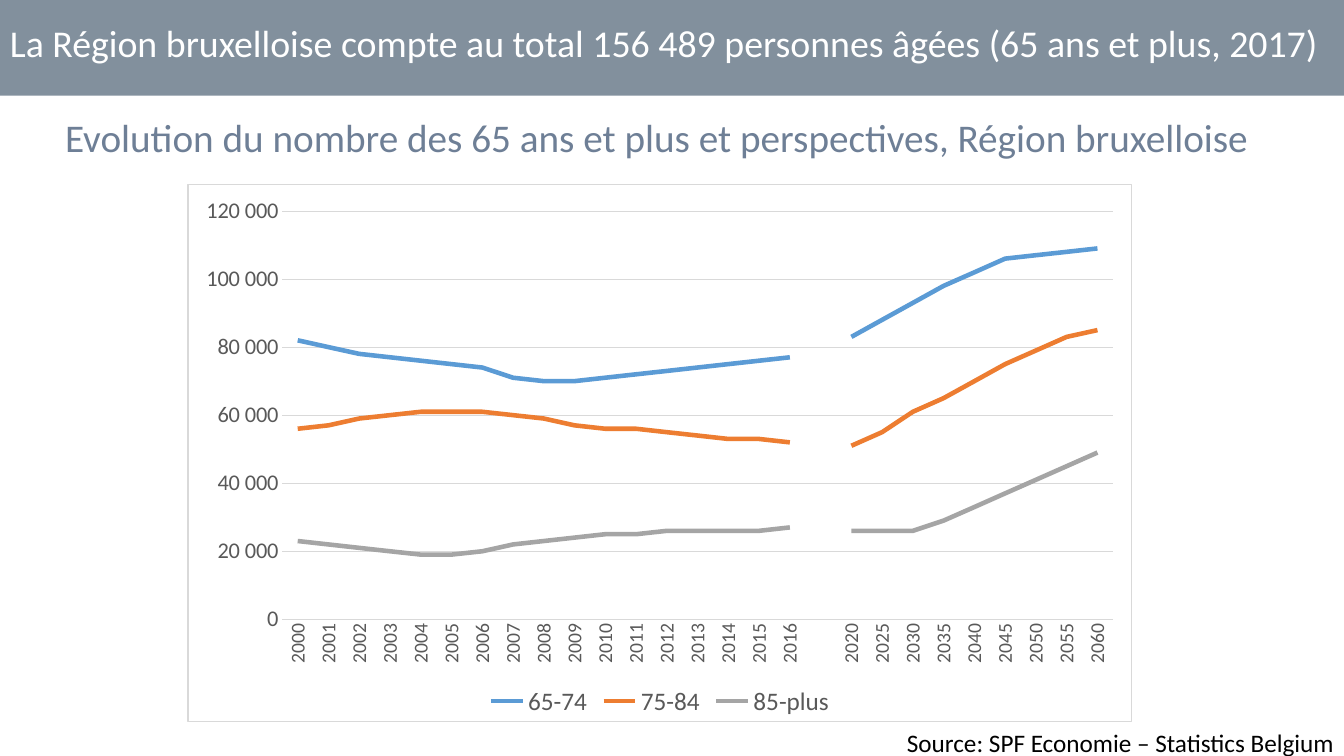
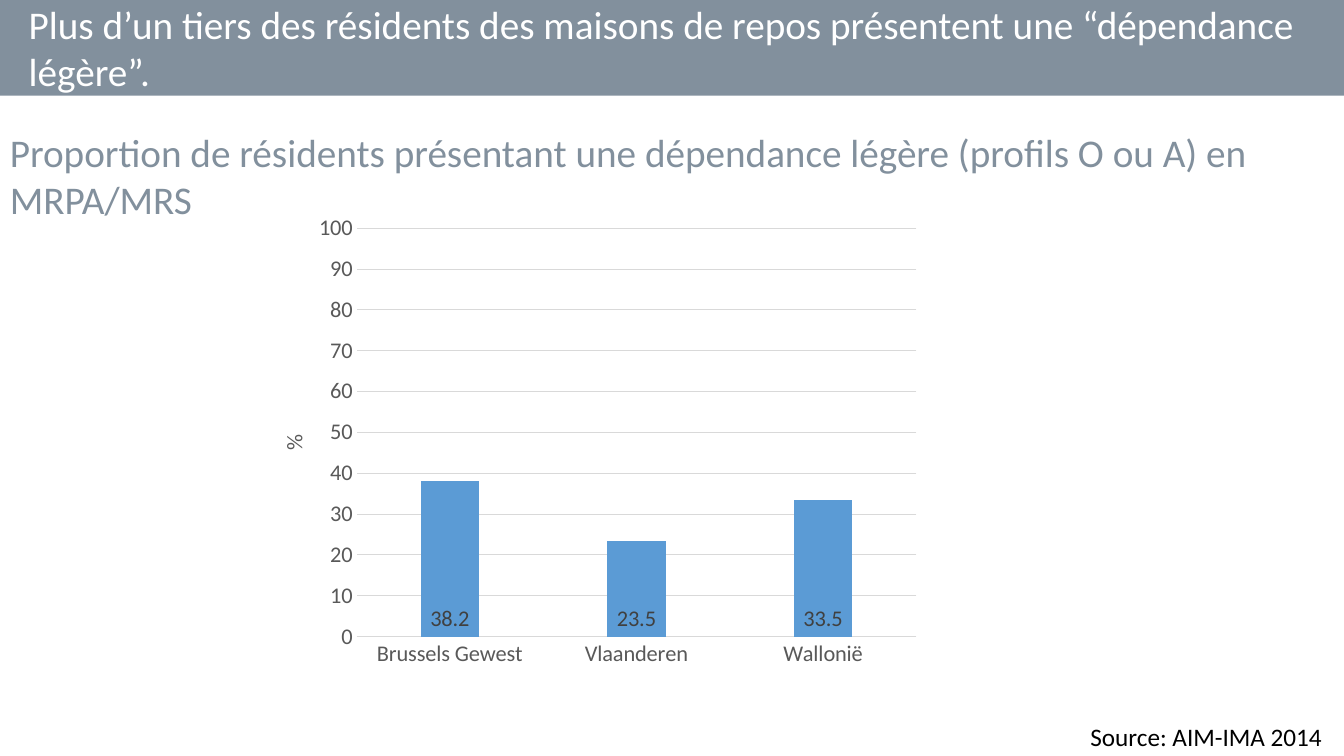
"""Two slides on older residents in Brussels: a line chart of trends and a column chart by region."""
from lxml import etree
from pptx import Presentation, util as u
from pptx.chart.data import CategoryChartData
from pptx.dml.color import RGBColor
from pptx.enum import chart as kinds, shapes, text
from pptx.oxml import parse_xml
from pptx.oxml.ns import nsdecls, qn

SLATE = RGBColor(0x82, 0x90, 0x9D)
STEEL = RGBColor(0x6E, 0x7F, 0x96)
WHITE = RGBColor(0xFF, 0xFF, 0xFF)
BLACK = RGBColor(0x00, 0x00, 0x00)
AXIS_GREY = RGBColor(0x59, 0x59, 0x59)
LABEL_GREY = RGBColor(0x40, 0x40, 0x40)
RULE_GREY = RGBColor(0xD9, 0xD9, 0xD9)
BLUE = RGBColor(0x5B, 0x9B, 0xD5)
ORANGE = RGBColor(0xED, 0x7D, 0x31)
SILVER = RGBColor(0xA5, 0xA5, 0xA5)
FONT = "Calibri"
VERTICAL = "-5400000"

deck = Presentation()
deck.slide_width, deck.slide_height = u.Inches(13.33), u.Inches(7.5)
COL, ROW = deck.slide_width / 100, deck.slide_height / 100


def style(font, size, color):
    font.name, font.size, font.bold = FONT, u.Pt(size), False
    font.color.rgb = color


def set_layout(parent, index, **shares):
    for old in parent.findall(qn("c:layout")):
        parent.remove(old)
    layout = etree.Element(qn("c:layout"))
    manual = etree.SubElement(layout, qn("c:manualLayout"))
    if "w" in shares:
        etree.SubElement(manual, qn("c:layoutTarget"), val="inner")
    for side in "xy":
        etree.SubElement(manual, qn(f"c:{side}Mode"), val="edge")
    for side, share in shares.items():
        etree.SubElement(manual, qn(f"c:{side}"), val=str(share))
    parent.insert(index, layout)


years = [*range(2000, 2017), "", *range(2020, 2061, 5)]
thousands = {
    "65-74": [82, 80, 78, 77, 76, 75, 74, 71, 70, 70, 71, 72, 73, 74, 75, 76, 77,
              None, 83, 88, 93, 98, 102, 106, 107, 108, 109],
    "75-84": [56, 57, 59, 60, 61, 61, 61, 60, 59, 57, 56, 56, 55, 54, 53, 53, 52,
              None, 51, 55, 61, 65, 70, 75, 79, 83, 85],
    "85-plus": [23, 22, 21, 20, 19, 19, 20, 22, 23, 24, 25, 25, 26, 26, 26, 26, 27,
                None, 26, 26, 26, 29, 33, 37, 41, 45, 49],
}
trends = CategoryChartData()
trends.categories = [str(year) for year in years]
for age_group, counts in thousands.items():
    trends.add_series(age_group, [n if n is None else n * 1000 for n in counts])

regions = CategoryChartData()
regions.categories = ["Brussels Gewest", "Vlaanderen", "Wallonië"]
regions.add_series("Series 1", [38.2, 23.5, 33.5])

LEFT, RIGHT = text.PP_ALIGN.LEFT, text.PP_ALIGN.RIGHT
pages = [
    {
        "texts": [
            ("La Région bruxelloise compte au total 156 489 personnes âgées (65 ans et plus, 2017)",
             (0, 2, 100, 7.5), 27, WHITE, LEFT),
            ("Source: SPF Economie – Statistics Belgium", (56.3, 95.5, 43.7, 5.3), 18, BLACK, RIGHT),
            ("Evolution du nombre des 65 ans et plus et perspectives, Région bruxelloise",
             (4.1, 14.3, 90.9, 7.6), 28, STEEL, LEFT),
        ],
        "kind": kinds.XL_CHART_TYPE.LINE, "data": trends, "area": (13.95, 24.3, 70.3, 71.2),
        "plot": {"x": 0.1, "y": 0.05, "w": 0.88, "h": 0.76},
        "top": 120000, "step": 20000, "category_size": 14,
    },
    {
        "texts": [
            ("Plus d’un tiers des résidents des maisons de repos présentent une “dépendance légère”.",
             (1.4, -0.6, 98.6, 13.9), 28, WHITE, LEFT),
            ("Source: AIM-IMA 2014", (46, 94.7, 53.1, 5.3), 18, BLACK, RIGHT),
            ("Proportion de résidents présentant une dépendance légère (profils O ou A) en MRPA/MRS",
             (0, 16.3, 100, 13.9), 28, SLATE, LEFT),
        ],
        "kind": kinds.XL_CHART_TYPE.COLUMN_CLUSTERED, "data": regions, "area": (18.4, 27.1, 50.8, 62.1),
        "plot": {"x": 0.16, "y": 0.05, "w": 0.82, "h": 0.87},
        "top": 100, "step": 10, "category_size": 16,
    },
]

charts = []
for page in pages:
    slide = deck.slides.add_slide(deck.slide_layouts[6])
    band = slide.shapes.add_shape(shapes.MSO_SHAPE.RECTANGLE, 0, 0, deck.slide_width, u.Inches(0.95))
    band.shadow.inherit = False
    band.fill.solid()
    band.fill.fore_color.rgb = SLATE
    band.line.fill.background()

    for wording, (left, top, width, height), size, color, align in page["texts"]:
        box = slide.shapes.add_textbox(int(left * COL), int(top * ROW), int(width * COL), int(height * ROW))
        box.text_frame.word_wrap = True
        line = box.text_frame.paragraphs[0]
        line.text, line.alignment = wording, align
        style(line.font, size, color)

    left, top, width, height = page["area"]
    chart = slide.shapes.add_chart(page["kind"], int(left * COL), int(top * ROW),
                                   int(width * COL), int(height * ROW), page["data"]).chart
    charts.append(chart)
    style(chart.font, 10, BLACK)
    chart.has_title = chart.has_legend = False
    chart.plots[0].vary_by_categories = False
    set_layout(chart._chartSpace.chart.plotArea, 0, **page["plot"])

    years_or_regions, scale = chart.category_axis, chart.value_axis
    for axis, size in ((years_or_regions, page["category_size"]), (scale, 16)):
        style(axis.tick_labels.font, size, AXIS_GREY)
        axis.major_tick_mark = axis.minor_tick_mark = kinds.XL_TICK_MARK.NONE
    scale.minimum_scale, scale.maximum_scale, scale.major_unit = 0, page["top"], page["step"]
    scale.format.line.fill.background()
    scale.has_major_gridlines = True
    for rule in (years_or_regions.format.line, scale.major_gridlines.format.line):
        rule.color.rgb, rule.width = RULE_GREY, u.Pt(0.75)

trend_chart, region_chart = charts

for series, color in zip(trend_chart.plots[0].series, (BLUE, ORANGE, SILVER)):
    series.smooth = False
    series.marker.style = kinds.XL_MARKER_STYLE.NONE
    series.format.line.color.rgb, series.format.line.width = color, u.Pt(3.25)
trend_chart.has_legend = True
trend_chart.legend.position = kinds.XL_LEGEND_POSITION.BOTTOM
trend_chart.legend.include_in_layout = False
style(trend_chart.legend.font, 18, AXIS_GREY)
trend_chart.value_axis.tick_labels.number_format = r"#\ ##0"
trend_chart.value_axis.tick_labels.number_format_is_linked = False
trend_chart.category_axis._element.find(f"{qn('c:txPr')}/{qn('a:bodyPr')}").set("rot", VERTICAL)
trend_chart._chartSpace.chart.addnext(parse_xml(
    f'<c:spPr {nsdecls("c", "a")}><a:solidFill><a:srgbClr val="{WHITE}"/></a:solidFill>'
    f'<a:ln w="{u.Pt(0.75)}"><a:solidFill><a:srgbClr val="{RULE_GREY}"/></a:solidFill></a:ln></c:spPr>'))

columns = region_chart.plots[0]
columns.gap_width, columns.overlap = 219, -27
columns.series[0].format.fill.solid()
columns.series[0].format.fill.fore_color.rgb = BLUE
shares = columns.series[0].data_labels
shares.show_value = True
shares.position = kinds.XL_LABEL_POSITION.INSIDE_BASE
style(shares.font, 16, LABEL_GREY)
unit = region_chart.value_axis.axis_title
unit.text_frame.text = "%"
style(unit.text_frame.paragraphs[0].font, 16, AXIS_GREY)
unit.text_frame._txBody.find(qn("a:bodyPr")).set("rot", VERTICAL)
set_layout(unit._element, 1, x=0.04, y=0.48)

deck.save("out.pptx")
